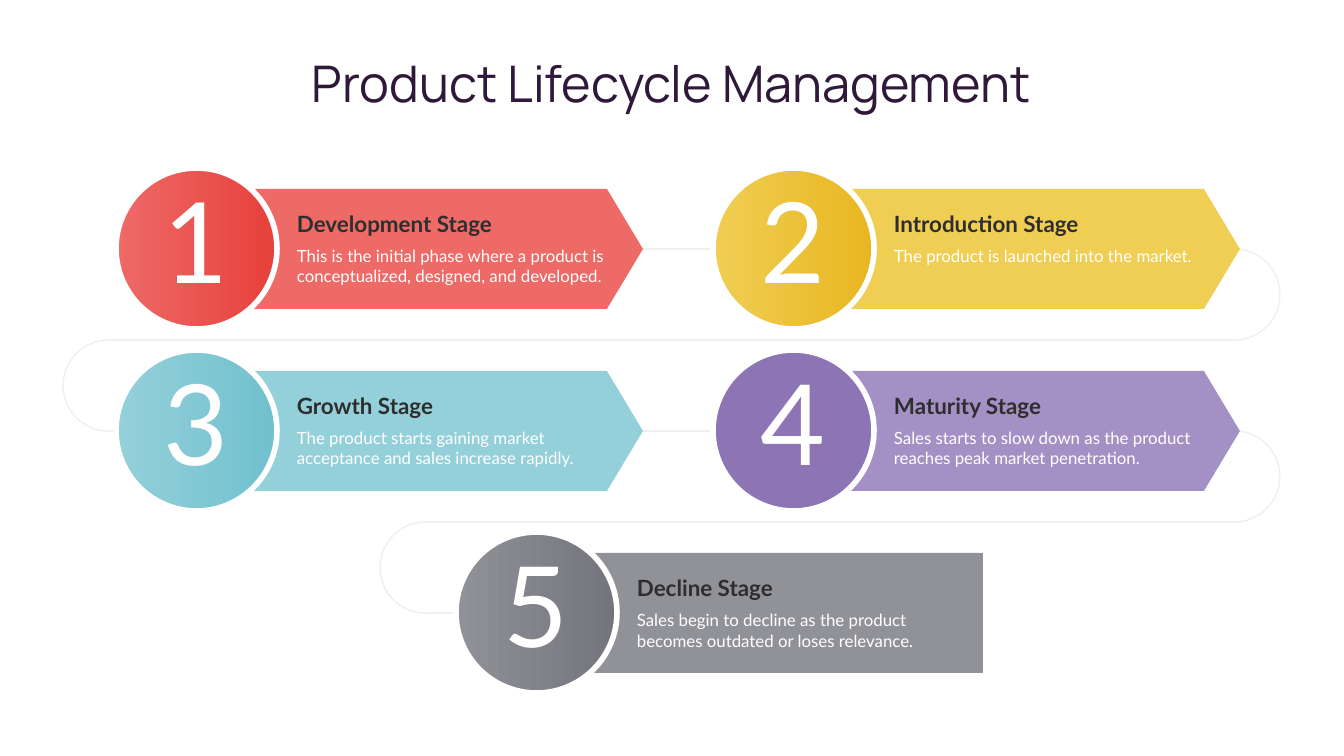
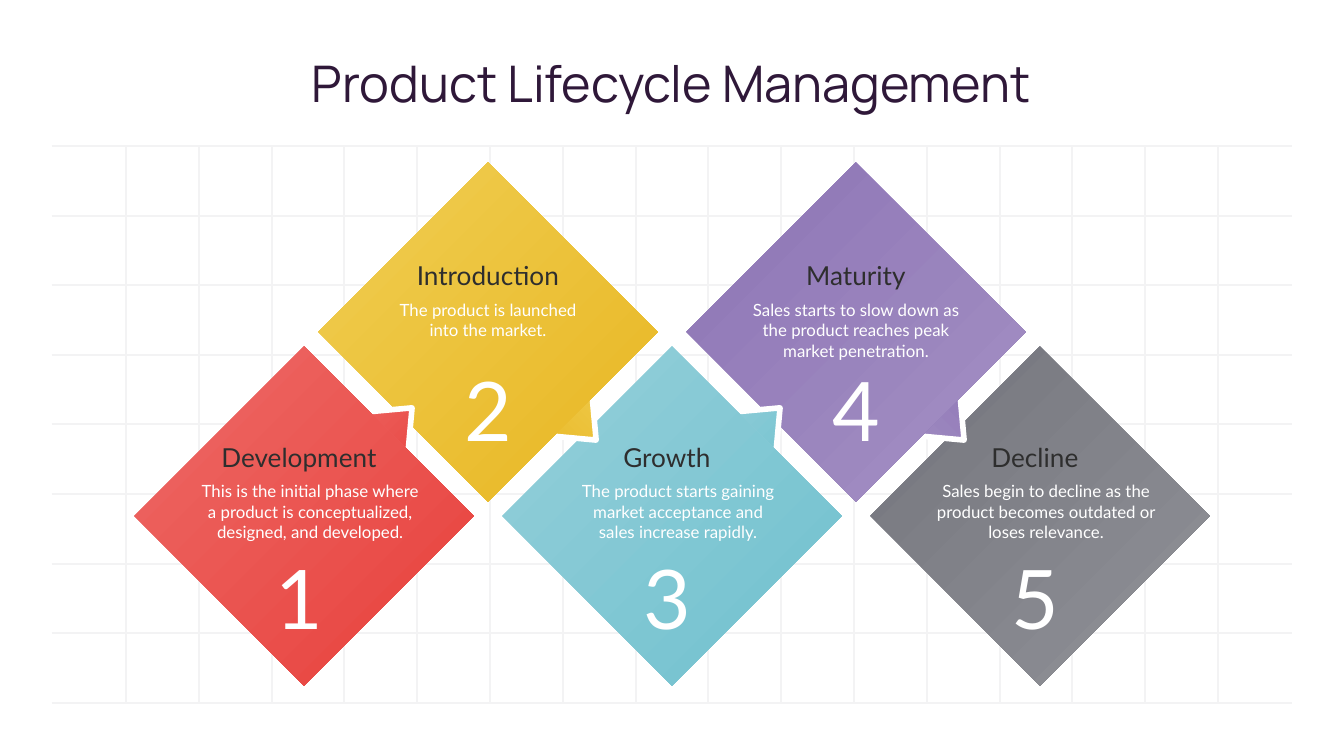
"""Build two slides on the five stages of the product lifecycle."""
import pptx
import pptx.dml.color
import pptx.enum.shapes
import pptx.enum.text
import pptx.oxml
import pptx.util

PX = 6804
WHITE, INK, TITLE = "FFFFFF", "2E2E2E", "2F1839"
TRACK, GRID = "EFEFF0", "F3F3F4"
MSO = pptx.enum.shapes.MSO_SHAPE
ALIGN = pptx.enum.text.PP_ALIGN
STRAIGHT = pptx.enum.shapes.MSO_CONNECTOR.STRAIGHT
NO_EFFECT = '<a:effectLst xmlns:a="http://schemas.openxmlformats.org/drawingml/2006/main"/>'
STAGES = [
    ("Development", "This is the initial phase where\na product is conceptualized, designed, and developed.", "ED6A67", "E8403B"),
    ("Introduction", "The product is launched\ninto the market.", "F0CE53", "E8B621"),
    ("Growth", "The product starts gaining market acceptance and sales increase rapidly.", "94D0DA", "71C0CE"),
    ("Maturity", "Sales starts to slow down as the product reaches peak market penetration.", "A490C4", "8D75B5"),
    ("Decline", "Sales begin to decline as the product becomes outdated or loses relevance.", "919298", "73747C"),
]


def paint(fill, *hexes):
    """Apply no fill, a solid or a two-stop gradient, by the number of colours."""
    colors = [pptx.dml.color.RGBColor.from_string(h) for h in hexes]
    if not colors:
        fill.background()
    elif len(colors) == 1:
        fill.solid()
        fill.fore_color.rgb = colors[0]
    else:
        fill.gradient()
        fill.gradient_angle = 0
        for stop, color, position in zip(fill.gradient_stops, colors, (0, 1)):
            stop.color.rgb = color
            stop.position = position


def text(s, value, x, y, w, h, size, color=WHITE, font="Lato", bold=False,
         align=ALIGN.CENTER, inset=0, spacing=None):
    """Add a text box with one paragraph per line of the value."""
    sp = s.shapes.add_textbox(x * PX, y * PX, w * PX, h * PX)
    tf = sp.text_frame
    tf.word_wrap = True
    tf.auto_size = pptx.enum.text.MSO_AUTO_SIZE.SHAPE_TO_FIT_TEXT
    tf.margin_left = tf.margin_right = tf.margin_top = tf.margin_bottom = inset * PX
    for i, line in enumerate(value.split("\n")):
        p = tf.add_paragraph() if i else tf.paragraphs[0]
        p.alignment = align
        p.line_spacing = spacing
        r = p.add_run()
        r.text = line
        r.font.name, r.font.size, r.font.bold = font, pptx.util.Pt(size), bold
        paint(r.font.fill, color)


prs = pptx.Presentation()
prs.slide_width, prs.slide_height = 1344 * PX, 756 * PX
path_slide, diamond_slide = [prs.slides.add_slide(prs.slide_layouts[6]) for _ in range(2)]
for s in (path_slide, diamond_slide):
    text(s, "Product Lifecycle Management", 52, 52, 1238, 61, 27, color=TITLE, font="Manrope")

segments = []
for i, (x1, x2) in enumerate([(638, 1236), (110, 1236), (109, 1235), (427, 1236), (426, 931)]):
    segments.append((path_slide, TRACK, x1, 249 + 91 * i, x2, 249 + 91 * i))
for i in range(16):
    x = round(126 + 72.8 * i)
    segments.append((diamond_slide, GRID, x, 146, x, 703))
for i in range(9):
    y = round(146 + 69.6 * i)
    segments.append((diamond_slide, GRID, 52, y, 1292, y))
for s, color, x1, y1, x2, y2 in segments:
    c = s.shapes.add_connector(STRAIGHT, x1 * PX, y1 * PX, x2 * PX, y2 * PX)
    c.line.width = pptx.util.Pt(0.75)
    paint(c.line.fill, color)
    c._element.spPr.append(pptx.oxml.parse_xml(NO_EFFECT))

s = path_slide
for i, x in enumerate([1189, 63, 1189, 380]):
    sp = s.shapes.add_shape(MSO.ARC, x * PX, (249 + 91 * i) * PX, 91 * PX, 91 * PX)
    sp.adjustments[0], sp.adjustments[1] = 162, 55.1
    sp.rotation = 180 * (i % 2)
    sp.shadow.inherit = False
    sp.line.width = pptx.util.Pt(0.75)
    paint(sp.fill)
    paint(sp.line.fill, TRACK)

for i, (name, body, light, dark) in enumerate(STAGES):
    x = 456 if i == 4 else 116 + 597 * (i % 2)
    y = 168 + 182 * (i // 2)
    plate = s.shapes.add_shape(MSO.PENTAGON, (x + 98) * PX, (y + 21) * PX, 429 * PX, 120 * PX)
    plate.adjustments[0] = 0 if i == 4 else 0.3
    plate.shadow.inherit = False
    paint(plate.fill, light)
    paint(plate.line.fill)
    disc = s.shapes.add_shape(MSO.OVAL, x * PX, y * PX, 161 * PX, 161 * PX)
    disc.shadow.inherit = False
    disc.line.width = pptx.util.Pt(3)
    paint(disc.fill, *([dark] if name == "Maturity" else [light, dark]))
    paint(disc.line.fill, WHITE)
    text(s, str(i + 1), x + 15, y + 6, 130, 149, 60, inset=13, spacing=0.9)
    text(s, name + " Stage", x + 181, y + 42, 278, 27, 12, color=INK, bold=True, align=ALIGN.LEFT)
    text(s, body.replace("\n", " "), x + 181, y + 78, 316, 40, 9, align=ALIGN.LEFT)

s = diamond_slide
for i, (name, body, light, dark) in reversed(list(enumerate(STAGES))):
    upper = i % 2
    cx, cy = 304 + 184 * i, 332 if upper else 516
    colors = (light, dark) if i < 3 else (dark, light)
    if i < 4:
        tab_y = cy + (89 if upper else -89)
        tab = s.shapes.add_shape(MSO.ISOSCELES_TRIANGLE, (cx + 44) * PX, (tab_y - 27) * PX, 90 * PX, 54 * PX)
        tab.rotation = 135 if upper else 45
        tab.shadow.inherit = False
        tab.line.width = pptx.util.Pt(3)
        paint(tab.fill, *colors)
        paint(tab.line.fill, WHITE)
    sp = s.shapes.add_shape(MSO.RECTANGLE, (cx - 120) * PX, (cy - 120) * PX, 240 * PX, 240 * PX)
    sp.rotation = 45
    sp.shadow.inherit = False
    paint(sp.fill, *colors)
    paint(sp.line.fill)
    label_x, body_x = (cx, cx) if upper else (cx - 5, cx + 6)
    number_y, name_y, body_y = (39, -73, -32) if upper else (43, -75, -35)
    body_w = 218 if upper else 208 if name == "Growth" else 250
    text(s, str(i + 1), label_x - 65, cy + number_y, 130, 90, 44, spacing=0.9)
    text(s, name, label_x - 118, cy + name_y, 236, 32, 14, color=INK)
    text(s, body, body_x - body_w // 2, cy + body_y, body_w, 60, 9)

prs.save("out.pptx")
